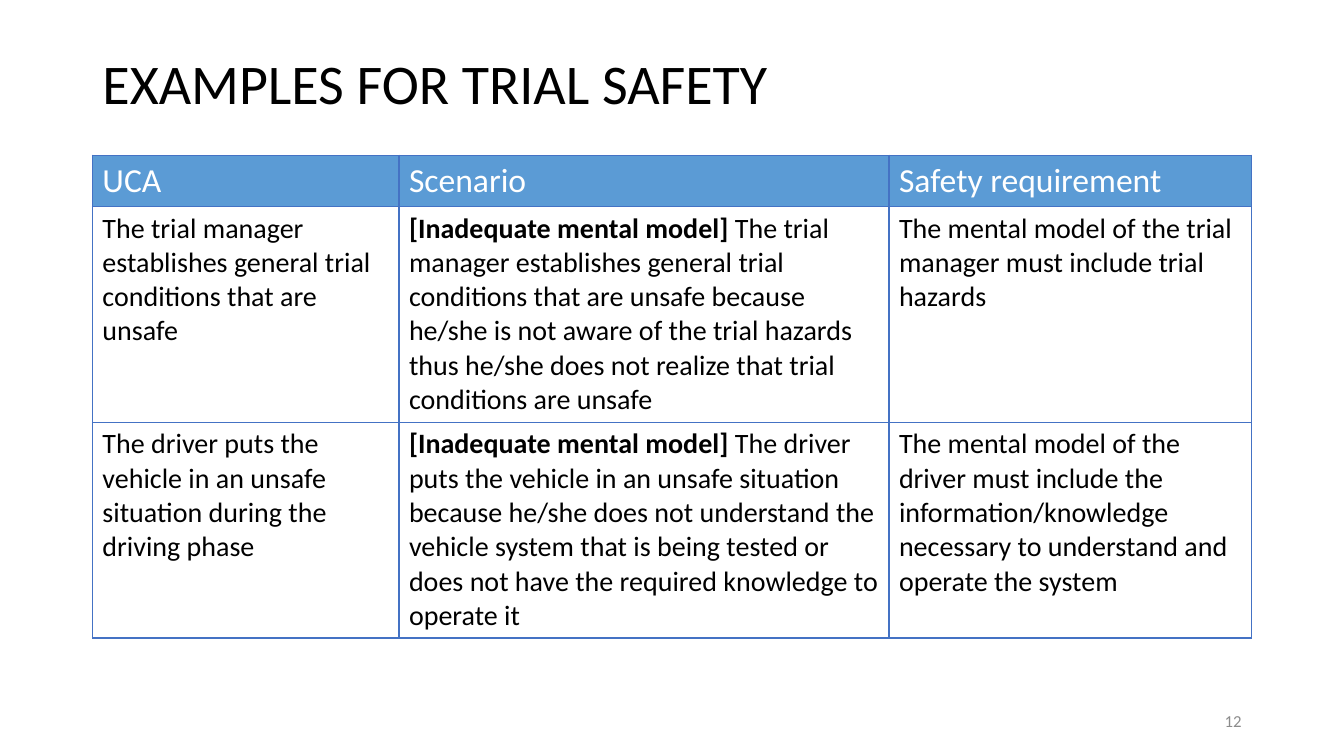
"""Build a slide with a table of trial safety examples."""
from dataclasses import dataclass

from lxml import etree
from pptx import Presentation
from pptx.dml.color import RGBColor
from pptx.enum.text import MSO_ANCHOR, PP_ALIGN
from pptx.oxml.ns import qn
from pptx.util import Pt

LEFT, RIGHT = PP_ALIGN.LEFT, PP_ALIGN.RIGHT
MIDDLE = MSO_ANCHOR.MIDDLE
TITLE_ONLY = 5


@dataclass(frozen=True)
class Theme:
    """Colours, font and type sizes."""
    font: str = "Calibri"
    text: str = "000000"
    header_text: str = "FFFFFF"
    header_fill: str = "5B9BD5"
    border: str = "4472C4"
    muted: str = "8C8C8C"
    title_size: int = 40
    header_size: int = 24
    body_size: int = 20
    number_size: int = 12


class SlideBuilder:
    """Draw styled elements on the current slide."""

    def __init__(self, slide, theme):
        """Keep the slide and its style."""
        self.slide = slide
        self.theme = theme

    def add_run(self, paragraph, text, size, color, bold=False):
        """Append one formatted run."""
        run = paragraph.add_run()
        run.text = text
        run.font.name = self.theme.font
        run.font.size = Pt(size)
        run.font.bold = bold
        run.font.color.rgb = RGBColor.from_string(color)

    def add_title(self, text, left, top, width, height):
        """Place and fill the title placeholder."""
        title = self.slide.shapes.title
        title.left, title.top = Pt(left), Pt(top)
        title.width, title.height = Pt(width), Pt(height)
        title.text_frame.vertical_anchor = MIDDLE
        heading = title.text_frame.paragraphs[0]
        heading.alignment = LEFT
        heading.line_spacing = 0.9
        self.add_run(heading, text, self.theme.title_size, self.theme.text)

    def add_page_number(self, text, left, top, width, height):
        """Add the right-aligned page number."""
        box = self.slide.shapes.add_textbox(Pt(left), Pt(top), Pt(width), Pt(height))
        box.text_frame.word_wrap = True
        box.text_frame.vertical_anchor = MIDDLE
        number = box.text_frame.paragraphs[0]
        number.alignment = RIGHT
        self.add_run(number, text, self.theme.number_size, self.theme.muted)

    def add_borders(self, cell):
        """Outline all four sides of a cell."""
        properties = cell._tc.get_or_add_tcPr()
        for side in ("a:lnL", "a:lnR", "a:lnT", "a:lnB"):
            line = etree.SubElement(properties, qn(side), w=str(Pt(1)))
            fill = etree.SubElement(line, qn("a:solidFill"))
            etree.SubElement(fill, qn("a:srgbClr"), val=self.theme.border)

    def fill_cell(self, cell, runs, is_header):
        """Format one cell and write its (text, bold) runs."""
        theme = self.theme
        self.add_borders(cell)
        if is_header:
            cell.fill.solid()
            cell.fill.fore_color.rgb = RGBColor.from_string(theme.header_fill)
            size, color = theme.header_size, theme.header_text
        else:
            cell.fill.background()
            size, color = theme.body_size, theme.text
        for text, bold in runs:
            self.add_run(cell.text_frame.paragraphs[0], text, size, color, bold)

    def add_table(self, rows, left, top, widths, heights):
        """Add a table with a header row."""
        table = self.slide.shapes.add_table(
            len(rows), len(widths), Pt(left), Pt(top), Pt(sum(widths)), Pt(sum(heights))
        ).table
        table.horz_banding = False
        for column, width in zip(table.columns, widths):
            column.width = Pt(width)
        for row_index, (row, height) in enumerate(zip(rows, heights)):
            table.rows[row_index].height = Pt(height)
            for column_index, runs in enumerate(row):
                self.fill_cell(table.cell(row_index, column_index), runs, row_index == 0)


CAUSE = ("[Inadequate mental model] ", True)
EXAMPLES = [
    [[("UCA", False)], [("Scenario", False)], [("Safety requirement", False)]],
    [
        [("The trial manager establishes general trial conditions that are unsafe", False)],
        [CAUSE, ("The trial manager establishes general trial conditions that are unsafe "
                 "because he/she is not aware of the trial hazards thus he/she does not "
                 "realize that trial conditions are unsafe", False)],
        [("The mental model of the trial manager must include trial hazards", False)],
    ],
    [
        [("The driver puts the vehicle in an unsafe situation during the driving phase", False)],
        [CAUSE, ("The driver puts the vehicle in an unsafe situation because he/she does not "
                 "understand the vehicle system that is being tested or does not have the "
                 "required knowledge to operate it", False)],
        [("The mental model of the driver must include the information/knowledge necessary "
          "to understand and operate the system", False)],
    ],
]


def main():
    """Create and save the presentation."""
    presentation = Presentation()
    presentation.slide_width, presentation.slide_height = Pt(960), Pt(540)
    slide = presentation.slides.add_slide(presentation.slide_layouts[TITLE_ONLY])
    builder = SlideBuilder(slide, Theme())
    builder.add_title("EXAMPLES FOR TRIAL SAFETY", 66, 9.4, 828, 104.4)
    builder.add_table(EXAMPLES, 66, 110.9, (219, 350, 259), (36.5, 154, 154))
    builder.add_page_number("12", 678, 500.5, 216, 28.8)
    presentation.save("out.pptx")


if __name__ == "__main__":
    main()
